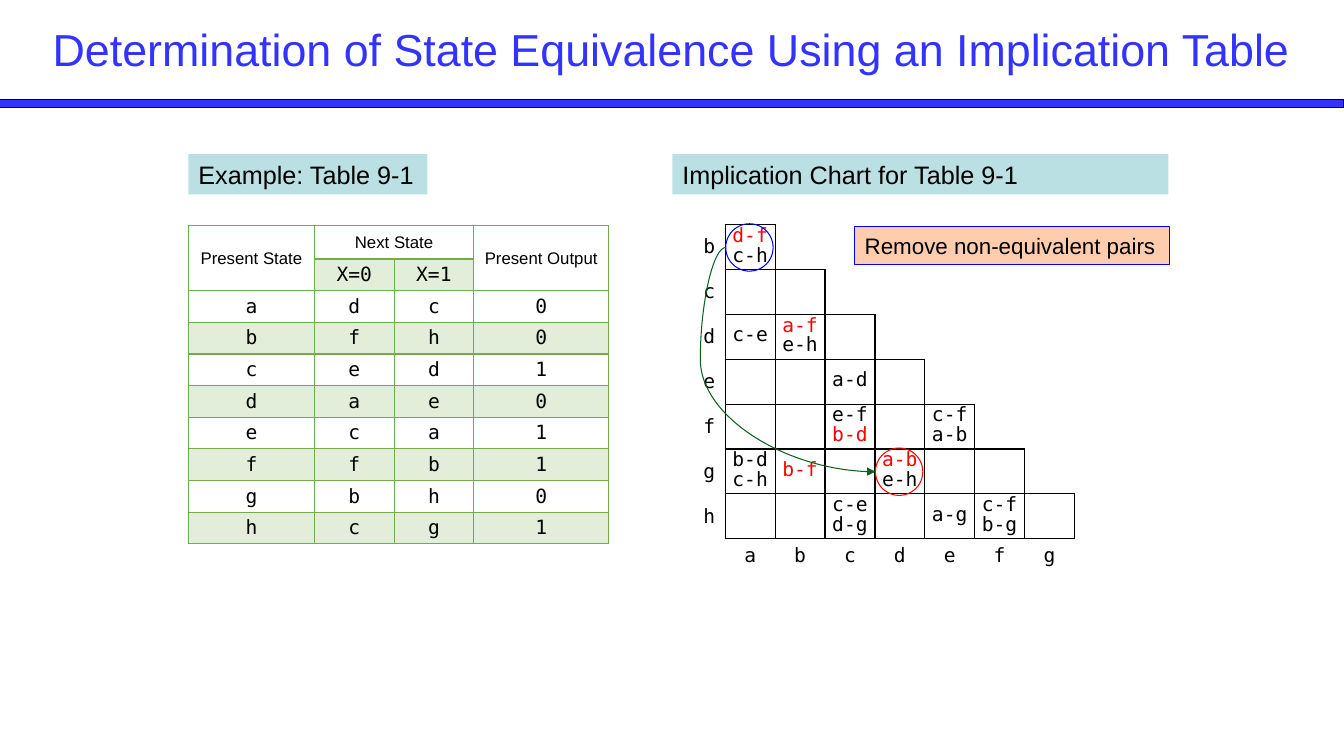
from lxml.etree import SubElement as sub
from pptx import Presentation
from pptx.dml.color import RGBColor as Rgb
from pptx.enum.shapes import MSO_CONNECTOR as Conn, MSO_SHAPE as Kind
from pptx.enum.text import MSO_ANCHOR as Anchor, PP_ALIGN as Align
from pptx.oxml import parse_xml
from pptx.oxml.ns import nsdecls, qn
from pptx.util import Inches, Pt

INK = {"black": "000000", "blue": "3333FF", "pure": "0000FF", "red": "FF0000",
       "green": "70AD47", "dark": "0D5F22", "teal": "BBE0E3", "orange": "FF6600"}
SANS, MONO = "Arial", "DejaVu Sans Mono"
PLAIN = "{2D5ABB26-0587-4C30-8999-92F81FD0307C}"
SIDES = {"L": (0, -1), "R": (0, 1), "T": (-1, 0), "B": (1, 0)}
WIDE, HIGH = 133.33, 75


class Deck:
    """Draws on one slide with a grid of 133.33 columns by 75 rows."""

    def __init__(self):
        self.show = Presentation()
        self.show.slide_width, self.show.slide_height = self.grid(WIDE, HIGH)
        self.slide = self.show.slides.add_slide(self.show.slide_layouts[6])
        self.shapes = self.slide.shapes

    def grid(self, *spans):
        return [Inches(span / 10) for span in spans]

    def paint(self, fill, ink, alpha=None):
        if not ink:
            fill.background()
            return
        fill.solid()
        fill.fore_color.rgb = Rgb.from_string(INK[ink])
        if alpha:
            tint = fill._xPr.find(qn("a:solidFill"))[0]
            sub(tint, qn("a:alpha"), val=str(alpha * 1000))

    def letter(self, frame, text, size, font=SANS, align=Align.LEFT, lead=None):
        """Put each line in a paragraph; a line that starts with * is red."""
        frame.text = text.replace("*", "")
        for para, line in zip(frame.paragraphs, text.split("\n")):
            para.alignment = align
            if lead:
                para.line_spacing = Pt(lead)
            for run in para.runs:
                run.font.size, run.font.name = Pt(size), font
                ink = "red" if line.startswith("*") else "black"
                run.font.color.rgb = Rgb.from_string(INK[ink])

    def title(self, text, *place):
        box = self.shapes.add_textbox(*self.grid(*place))
        frame = box.text_frame
        frame.word_wrap, frame.vertical_anchor = True, Anchor.MIDDLE
        self.letter(frame, text, 32, align=Align.CENTER)
        frame.paragraphs[0].runs[0].font.color.rgb = Rgb.from_string(INK["blue"])

    def shape(self, kind, place, fill=None, line=None, alpha=None):
        form = self.shapes.add_shape(kind, *self.grid(*place))
        form.shadow.inherit = False
        self.paint(form.fill, fill, alpha)
        self.paint(form.line.fill, line)
        if line:
            form.line.width = Pt(0.75)
        return form

    def label(self, text, size, place, wrap=True, **look):
        frame = self.shape(Kind.RECTANGLE, place, **look).text_frame
        frame.word_wrap, frame.vertical_anchor = wrap, Anchor.MIDDLE
        self.letter(frame, text, size)

    def table(self, left, top, cols, rows):
        place = self.grid(left, top, sum(cols), sum(rows))
        frame = self.shapes.add_table(len(rows), len(cols), *place)
        for node in frame._element.iter(qn("a:tableStyleId")):
            node.text = PLAIN
        table = frame.table
        table.first_row = table.horz_banding = False
        for col, span in zip(table.columns, self.grid(*cols)):
            col.width = span
        for row, span in zip(table.rows, self.grid(*rows)):
            row.height = span
        return table

    def edge(self, cell, ink, sides):
        """Line the given sides of a cell and clear the others."""
        props = cell._tc.get_or_add_tcPr()
        for spot, side in enumerate(SIDES):
            fill = (f'<a:solidFill><a:srgbClr val="{INK[ink]}"/></a:solidFill>'
                    if side in sides else "<a:noFill/>")
            props.insert(spot, parse_xml(
                f'<a:ln{side} {nsdecls("a")} w="12700">{fill}</a:ln{side}>'))

    def inset(self, cell, side):
        cell.margin_left = cell.margin_right = Inches(side)
        cell.margin_top = cell.margin_bottom = 0

    def curve(self, start, end, bend):
        """Join two points by an arrow whose middle lies at a share of its width."""
        link = self.shapes.add_connector(Conn.CURVE, *self.grid(*start, *end))
        self.paint(link.line.fill, "dark")
        link.line.width = Pt(0.75)
        props = link._element.spPr
        guides = props.find(qn("a:prstGeom")).get_or_add_avLst()
        sub(guides, qn("a:gd"), name="adj1", fmla=f"val {round(bend * 100000)}")
        sub(props.find(qn("a:ln")), qn("a:tailEnd"), type="triangle")
        sub(props, qn("a:effectLst"))


STATES = ["Present State|Next State||Present Output", "|X=0|X=1|",
          "a|d|c|0", "b|f|h|0", "c|e|d|1", "d|a|e|0",
          "e|c|a|1", "f|f|b|1", "g|b|h|0", "h|c|g|1"]
# Key: row letter, then column letter
PAIRS = {"ba": "*d-f c-h", "da": "c-e", "db": "*a-f e-h", "ec": "a-d",
         "fc": "e-f *b-d", "fe": "c-f a-b", "ga": "b-d c-h", "gb": "*b-f",
         "gd": "*a-b e-h", "hc": "c-e d-g", "he": "a-g", "hf": "c-f b-g"}
DOWN, OVER = "bcdefgh", "abcdefg"
LEFT, TOP, STEP, RISE, RING = 67, 22.3, 4.95, 4.45, 4.7


def states(deck):
    table = deck.table(18.7, 22.4, [12.5, 7.9, 7.9, 13.4], [3.3] + [3.14] * 9)
    for r, line in enumerate(STATES):
        for c, text in enumerate(line.split("|")):
            cell = table.cell(r, c)
            deck.inset(cell, 0.1)
            cell.vertical_anchor = Anchor.MIDDLE
            size, font = (14, MONO) if r else (12, SANS)
            deck.letter(cell.text_frame, text, size, font, Align.CENTER)
            shade = r % 2 and (r > 1 or text)
            deck.paint(cell.fill, "green" if shade else None, 20)
            deck.edge(cell, "green", SIDES)
    for first, last in [((0, 0), (1, 0)), ((0, 1), (0, 2)), ((0, 3), (1, 3))]:
        table.cell(*first).merge(table.cell(*last))


def inside(r, c):
    return 0 <= r < len(DOWN) and 0 < c <= r + 1


def chart(deck):
    table = deck.table(LEFT, TOP, [STEP] * 8, [RISE] * 8)
    for r in range(8):
        for c in range(8):
            cell = table.cell(r, c)
            cell.fill.background()
            cell.vertical_anchor = Anchor.MIDDLE
            if inside(r, c):
                deck.inset(cell, 0)
                text = PAIRS.get(DOWN[r] + OVER[c - 1], "").replace(" ", "\n")
                deck.letter(cell.text_frame, text, 14, MONO, Align.CENTER, 14)
            elif c == 0 and r < 7:
                deck.letter(cell.text_frame, DOWN[r], 14, MONO, Align.RIGHT)
            elif r == 7 and c:
                cell.vertical_anchor = Anchor.TOP
                deck.letter(cell.text_frame, OVER[c - 1], 14, MONO, Align.CENTER)
            deck.edge(cell, "black", [
                side for side, (dr, dc) in SIDES.items()
                if inside(r, c) or inside(r + dr, c + dc)])


def rings(deck):
    """Circle the removed pair and the pair it rules out, and join them."""
    ends = []
    for pair, ink in [("ba", "pure"), ("gd", "red")]:
        x = LEFT + STEP * (OVER.index(pair[1]) + 1) + 0.05
        y = TOP + RISE * DOWN.index(pair[0]) - 0.1
        deck.shape(Kind.OVAL, (x, y, RING, RING), line=ink)
        ends.append((x, y + RING / 2))
    deck.curve(*ends, -0.17)


def main():
    deck = Deck()
    deck.shape(Kind.RECTANGLE, (0, 9.9, WIDE, 0.8), "blue", "black")
    deck.title("Determination of State Equivalence Using an Implication Table",
               2.1, 1.3, 129.1, 7.1)
    deck.label("Example: Table 9-1", 18, (18.7, 15.3, 23.7, 4), fill="teal")
    deck.label("Implication Chart for Table 9-1", 18, (66.7, 15.3, 49.2, 4),
               fill="teal")
    states(deck)
    chart(deck)
    rings(deck)
    deck.label("Remove non-equivalent pairs", 16, (84.8, 22.5, 31.2, 3.7),
               wrap=False, fill="orange", line="pure", alpha=32)
    deck.show.save("out.pptx")


if __name__ == "__main__":
    main()
